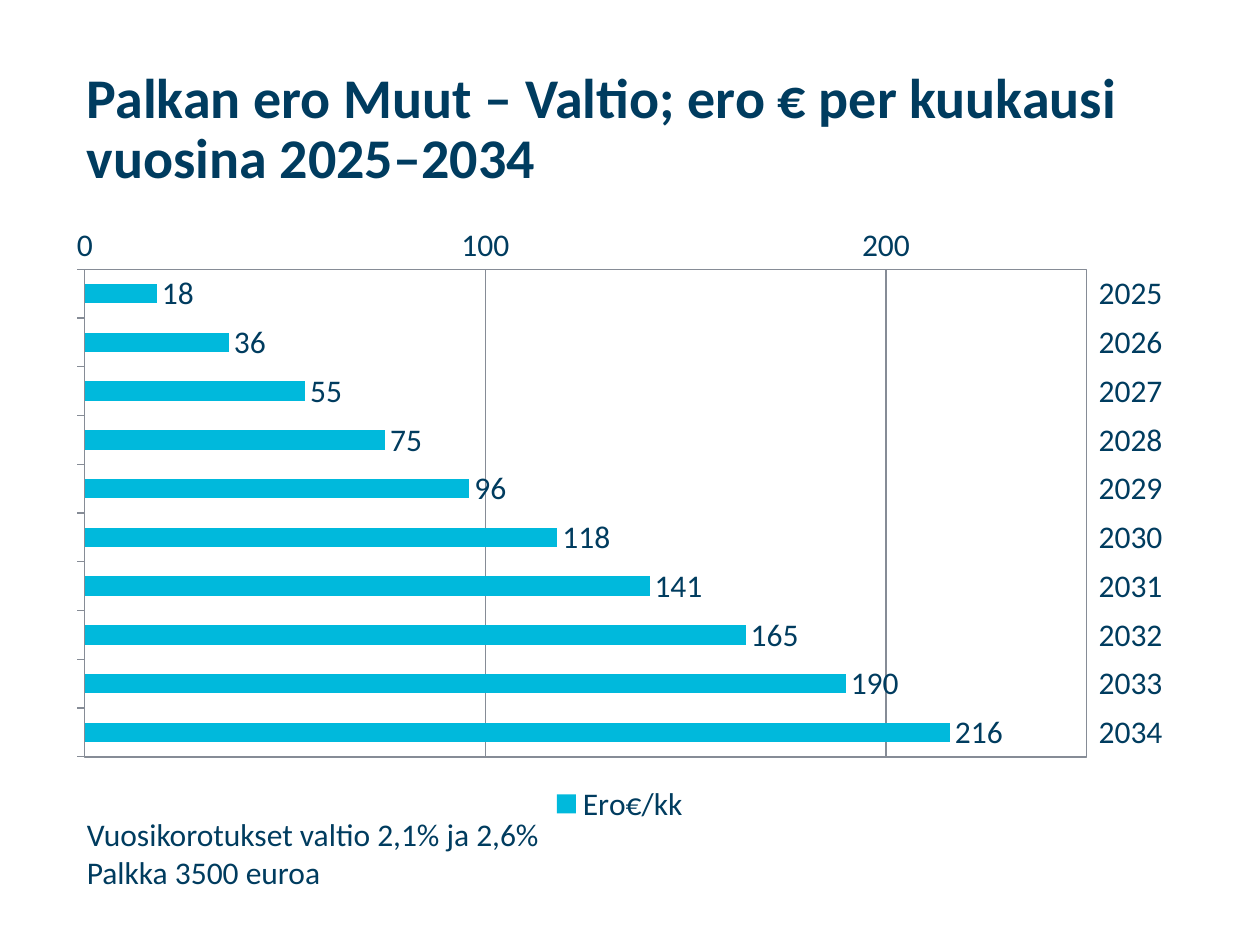
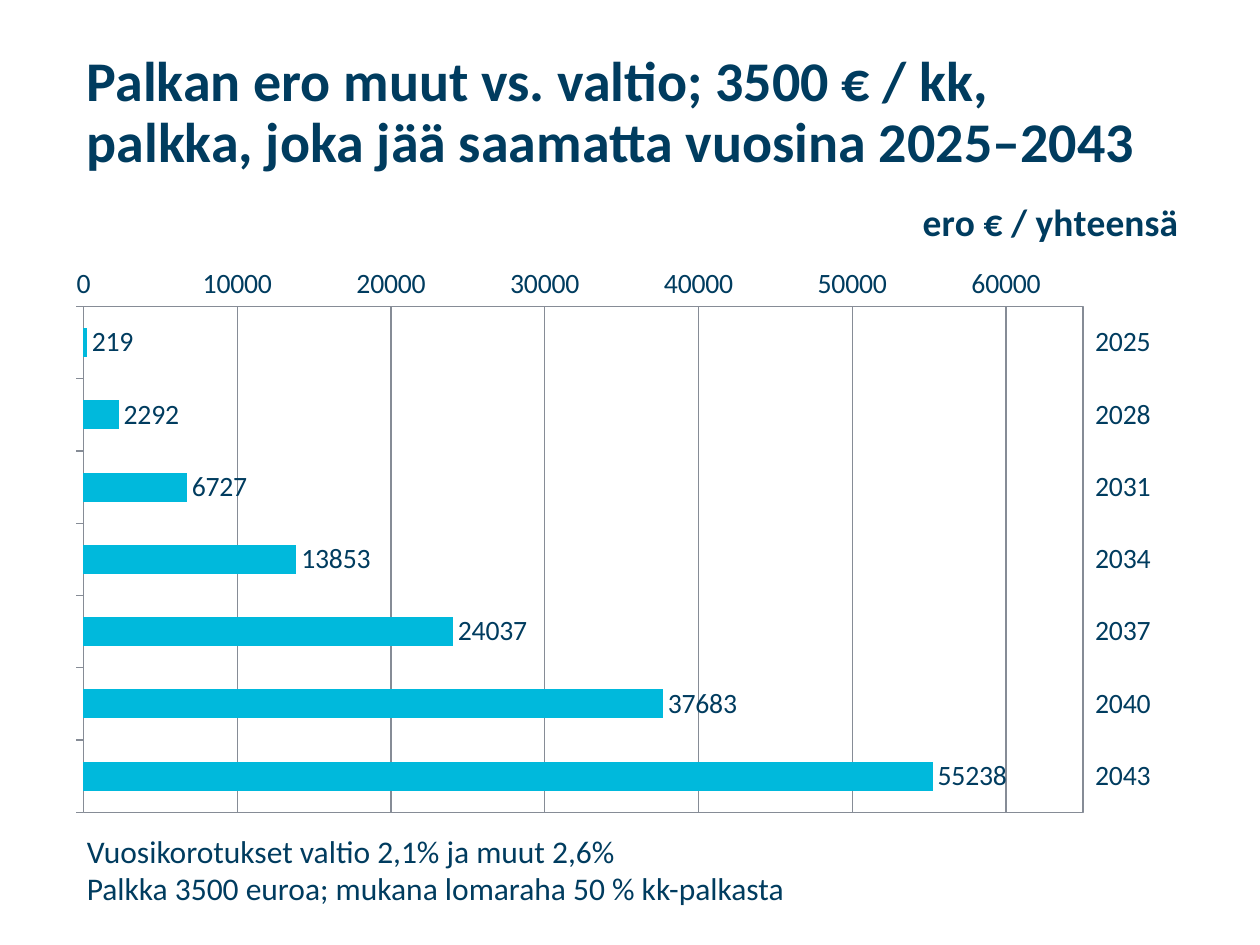
from dataclasses import dataclass

from lxml import etree
from pptx import Presentation
from pptx.chart.data import CategoryChartData
from pptx.dml.color import RGBColor
from pptx.enum.chart import XL_CHART_TYPE, XL_LABEL_POSITION, XL_LEGEND_POSITION
from pptx.enum.chart import XL_TICK_LABEL_POSITION, XL_TICK_MARK
from pptx.enum.text import MSO_ANCHOR
from pptx.oxml import parse_xml
from pptx.oxml.ns import nsdecls, qn
from pptx.util import Cm, Pt

BAR = XL_CHART_TYPE.BAR_CLUSTERED
OUTER = XL_LABEL_POSITION.OUTSIDE_END
BOTTOM = XL_LEGEND_POSITION.BOTTOM
HIGH = XL_TICK_LABEL_POSITION.HIGH
OUT, NONE = XL_TICK_MARK.OUTSIDE, XL_TICK_MARK.NONE
TOP, MIDDLE = MSO_ANCHOR.TOP, MSO_ANCHOR.MIDDLE


@dataclass(frozen=True)
class Theme:
    font: str = "Calibri"
    ink: str = "003C5F"
    bar: str = "00B9DC"
    grid: str = "868C96"
    rule: float = 0.75
    head: float = 32
    label: float = 21.6
    body: float = 18
    small: float = 16


THEME = Theme()


def style(font, size, bold=False):
    font.name = THEME.font
    font.size = Pt(size)
    font.bold = bold
    font.color.rgb = RGBColor.from_string(THEME.ink)


def add_text(slide, box, lines, size=THEME.body, bold=False, anchor=TOP, space=1.0):
    frame = slide.shapes.add_textbox(*map(Cm, box)).text_frame
    frame.word_wrap = True
    frame.vertical_anchor = anchor
    for i, line in enumerate(lines):
        para = frame.add_paragraph() if i else frame.paragraphs[0]
        para.text = line
        para.line_spacing = space
        for run in para.runs:
            style(run.font, size, bold)


def set_layout(node, index, outer, place):
    left, top, wide, high = outer
    parts = {"x": (place[0] - left) / wide, "y": (place[1] - top) / high}
    modes = ["xMode", "yMode"]
    if len(place) == 4:
        parts.update(w=place[2] / wide, h=place[3] / high)
    old = node.find(qn("c:layout"))
    if old is not None:
        node.remove(old)
    layout = parse_xml(f"<c:layout {nsdecls('c')}/>")
    manual = etree.SubElement(layout, qn("c:manualLayout"))
    if len(place) == 4:
        etree.SubElement(manual, qn("c:layoutTarget")).set("val", "inner")
    for mode in modes:
        etree.SubElement(manual, qn(f"c:{mode}")).set("val", "edge")
    for key, value in parts.items():
        etree.SubElement(manual, qn(f"c:{key}")).set("val", f"{value:.4f}")
    node.insert(index, layout)


def draw_line(line):
    line.color.rgb = RGBColor.from_string(THEME.grid)
    line.width = Pt(THEME.rule)


def frame_plot(area):
    area.append(parse_xml(
        f'<c:spPr {nsdecls("c", "a")}><a:noFill/><a:ln w="{Pt(THEME.rule)}">'
        f'<a:solidFill><a:srgbClr val="{THEME.grid}"/></a:solidFill></a:ln></c:spPr>'))


def add_bars(slide, box, plot, name, gaps, limit, step, size, title=None, legend=False):
    data = CategoryChartData(number_format="0")
    data.categories = [str(year) for year in gaps]
    data.add_series(name, gaps.values())
    chart = slide.shapes.add_chart(BAR, *map(Cm, box), data).chart
    style(chart.font, THEME.body)

    years, euros = chart.category_axis, chart.value_axis
    years.reverse_order = True
    years.tick_label_position = HIGH
    years.major_tick_mark = OUT
    euros.major_tick_mark = NONE
    euros.minimum_scale, euros.maximum_scale = 0, limit
    euros.major_unit = step
    euros.has_major_gridlines = True
    draw_line(euros.major_gridlines.format.line)
    for axis in (years, euros):
        axis.minor_tick_mark = NONE
        draw_line(axis.format.line)
        style(axis.tick_labels.font, size)
    euros.tick_labels.number_format = "0"
    euros.tick_labels.number_format_is_linked = False

    bars = chart.plots[0]
    bars.gap_width = 150
    bars.vary_by_categories = False
    fill = bars.series[0].format.fill
    fill.solid()
    fill.fore_color.rgb = RGBColor.from_string(THEME.bar)
    bars.has_data_labels = True
    labels = bars.data_labels
    labels.show_value = True
    labels.position = OUTER
    labels.number_format = "0"
    labels.number_format_is_linked = False
    style(labels.font, size)

    area = chart.element.find(".//" + qn("c:plotArea"))
    set_layout(area, 0, box, plot)
    frame_plot(area)
    chart.has_legend = legend
    if legend:
        chart.legend.position = BOTTOM
        chart.legend.include_in_layout = False
        style(chart.legend.font, THEME.body)
    chart.has_title = title is not None
    if title:
        para = chart.chart_title.text_frame.paragraphs[0]
        run = para.add_run()
        run.text = title
        style(run.font, THEME.label, True)
        spot = (box[0] + 0.77 * box[2], box[1] + 0.02 * box[3])
        set_layout(chart.element.find(".//" + qn("c:title")), 1, box, spot)


def add_page(deck, head, top, note, base, **bars):
    slide = deck.slides.add_slide(deck.slide_layouts[6])
    add_text(slide, (1.5, top, 23.62, 3.38), [head], size=THEME.head,
             bold=True, anchor=MIDDLE, space=0.9)
    add_bars(slide, **bars)
    add_text(slide, (1.5, base, 18.97, 1.8), note)


def main():
    deck = Presentation()
    deck.slide_width, deck.slide_height = Cm(25.4), Cm(19.05)
    month = [18, 36, 55, 75, 96, 118, 141, 165, 190, 216]
    total = [219, 2292, 6727, 13853, 24037, 37683, 55238]
    add_page(
        deck, "Palkan ero Muut – Valtio; ero € per kuukausi vuosina 2025–2034", 0.94,
        ["Vuosikorotukset valtio 2,1% ja 2,6%", "Palkka 3500 euroa"], 16.31,
        box=(1.09, 4.32, 22.81, 12.4), plot=(1.71, 5.43, 20.19, 9.83),
        name="Ero€/kk", gaps=dict(zip(range(2025, 2035), month)),
        limit=250, step=100, size=THEME.body, legend=True)
    add_page(
        deck, "Palkan ero muut vs. valtio; 3500 € / kk,\v"
        "palkka, joka jää saamatta vuosina 2025–2043", 0.61,
        ["Vuosikorotukset valtio 2,1% ja muut 2,6%",
         "Palkka 3500 euroa; mukana lomaraha 50 % kk-palkasta"], 16.64,
        box=(1.09, 3.53, 22.81, 13.13), plot=(1.69, 6.18, 20.37, 10.2),
        name="Series 1", gaps=dict(zip(range(2025, 2044, 3), total)),
        limit=65000, step=10000, size=THEME.small, title="ero € / yhteensä")
    deck.save("out.pptx")


if __name__ == "__main__":
    main()
